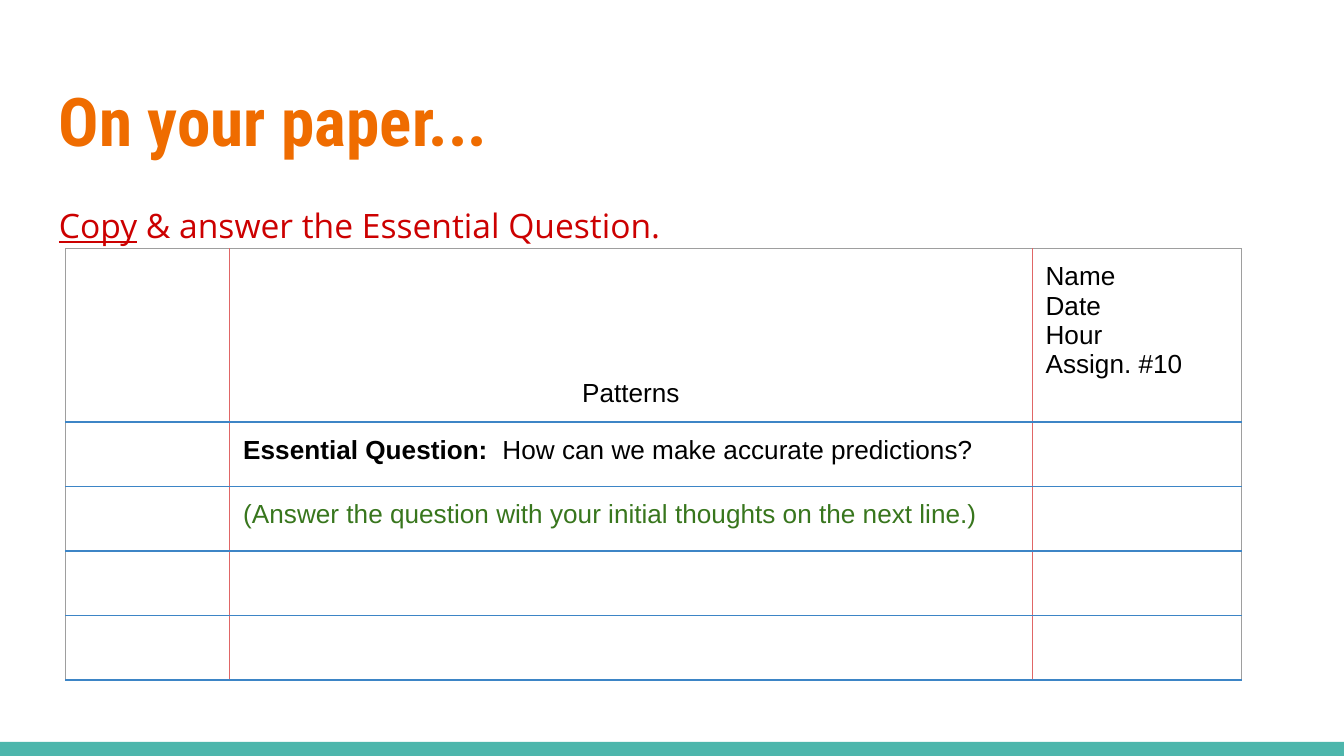
import pptx
import pptx.dml.color
import pptx.enum.shapes
import pptx.enum.text
import pptx.oxml
import pptx.oxml.ns
import pptx.util
from pptx.util import Inches

COLORS = {
    "white": "FFFFFF",
    "black": "000000",
    "teal": "4DB6AC",
    "orange": "EF6C00",
    "red": "CC0000",
    "green": "38761D",
    "gray": "9E9E9E",
    "margin": "E06666",
    "rule": "3D85C6",
}
COLUMN_WIDTHS = [1.22, 5.97, 1.56]
ROW_HEIGHTS = [1.29] + [0.48] * 4


def rgb(name):
    return pptx.dml.color.RGBColor.from_string(COLORS[name])


def add_text(para, text, font="Arial", size=14, color="black", bold=False, underline=False):
    span = para.add_run()
    span.text = text
    span.font.name = font
    span.font.size = pptx.util.Pt(size)
    span.font.color.rgb = rgb(color)
    span.font.bold = bold
    span.font.underline = underline


def set_border(cell, side, color):
    """Draw one cell edge; side is L, R, T or B, called in that order."""
    cell._tc.get_or_add_tcPr().append(pptx.oxml.parse_xml(
        f'<a:ln{side} {pptx.oxml.ns.nsdecls("a")} w="{pptx.util.Pt(0.75)}">'
        f'<a:solidFill><a:srgbClr val="{COLORS[color]}"/></a:solidFill>'
        f'<a:prstDash val="solid"/></a:ln{side}>'))


def set_empty_size(cell, size=14):
    """Keep an empty cell from growing its row."""
    cell.text_frame.paragraphs[0]._p.append(pptx.oxml.parse_xml(
        f'<a:endParaRPr {pptx.oxml.ns.nsdecls("a")} sz="{size * 100}"/>'))


class SlideBuilder:
    def __init__(self, slide, inset=0.1):
        self.slide = slide
        self.inset = Inches(inset)

    def set_insets(self, holder):
        holder.margin_left = holder.margin_right = self.inset
        holder.margin_top = holder.margin_bottom = self.inset

    def bar(self, left, top, width, height, color):
        bar = self.slide.shapes.add_shape(
            pptx.enum.shapes.MSO_SHAPE.RECTANGLE,
            Inches(left), Inches(top), Inches(width), Inches(height))
        bar.shadow.inherit = False
        bar.fill.solid()
        bar.fill.fore_color.rgb = rgb(color)
        bar.line.fill.background()

    def text_box(self, left, top, width, height):
        """Add an empty text box and return its first paragraph."""
        box = self.slide.shapes.add_textbox(
            Inches(left), Inches(top), Inches(width), Inches(height))
        box.text_frame.word_wrap = True
        self.set_insets(box.text_frame)
        return box.text_frame.paragraphs[0]

    def ruled_table(self, left, top, widths, heights):
        """Add a table lined like notebook paper, with gray outer edges."""
        frame = self.slide.shapes.add_table(
            len(heights), len(widths), Inches(left), Inches(top),
            Inches(sum(widths)), Inches(sum(heights)))
        table = frame.table
        table.first_row = table.horz_banding = False
        for column, width in zip(table.columns, widths):
            column.width = Inches(width)
        for row_index, height in enumerate(heights):
            table.rows[row_index].height = Inches(height)
            for column_index in range(len(widths)):
                cell = table.cell(row_index, column_index)
                self.set_insets(cell)
                last_column = column_index == len(widths) - 1
                set_border(cell, "L", "margin" if column_index else "gray")
                set_border(cell, "R", "gray" if last_column else "margin")
                set_border(cell, "T", "rule" if row_index else "gray")
                set_border(cell, "B", "rule")
                cell.fill.background()
        return table


def main():
    deck = pptx.Presentation()
    deck.slide_width = Inches(10)
    deck.slide_height = deck.slide_width * 9 // 16
    page = deck.slides.add_slide(deck.slide_layouts[6])
    page.background.fill.solid()
    page.background.fill.fore_color.rgb = rgb("white")
    builder = SlideBuilder(page)

    builder.bar(0, 5.52, 10, 0.11, "teal")
    title = builder.text_box(0.34, 0.49, 9.32, 0.77)
    add_text(title, "On your paper...", font="Roboto Condensed", size=36,
             color="orange", bold=True)

    instruction = builder.text_box(0.34, 1.38, 9.32, 0.51)
    instruction.line_spacing = 1.15
    instruction.space_after = pptx.util.Pt(16)
    style = {"font": "Open Sans", "size": 18, "color": "red"}
    add_text(instruction, "Copy", underline=True, **style)
    add_text(instruction, " & answer the Essential Question.", **style)

    table = builder.ruled_table(0.49, 1.85, COLUMN_WIDTHS, ROW_HEIGHTS)
    topic = table.cell(0, 1)
    topic.vertical_anchor = pptx.enum.text.MSO_ANCHOR.BOTTOM
    topic_para = topic.text_frame.paragraphs[0]
    topic_para.alignment = pptx.enum.text.PP_ALIGN.CENTER
    add_text(topic_para, "Patterns")

    heading = table.cell(0, 2).text_frame
    for index, label in enumerate(["Name", "Date", "Hour", "Assign. #10"]):
        para = heading.add_paragraph() if index else heading.paragraphs[0]
        add_text(para, label)

    question = table.cell(1, 1).text_frame.paragraphs[0]
    add_text(question, "Essential Question:  ", bold=True)
    add_text(question, "How can we make accurate predictions?")
    add_text(table.cell(2, 1).text_frame.paragraphs[0],
             "(Answer the question with your initial thoughts on the next line.)",
             color="green")
    for cell in table.iter_cells():
        if not cell.text:
            set_empty_size(cell)

    deck.save("out.pptx")


if __name__ == "__main__":
    main()
